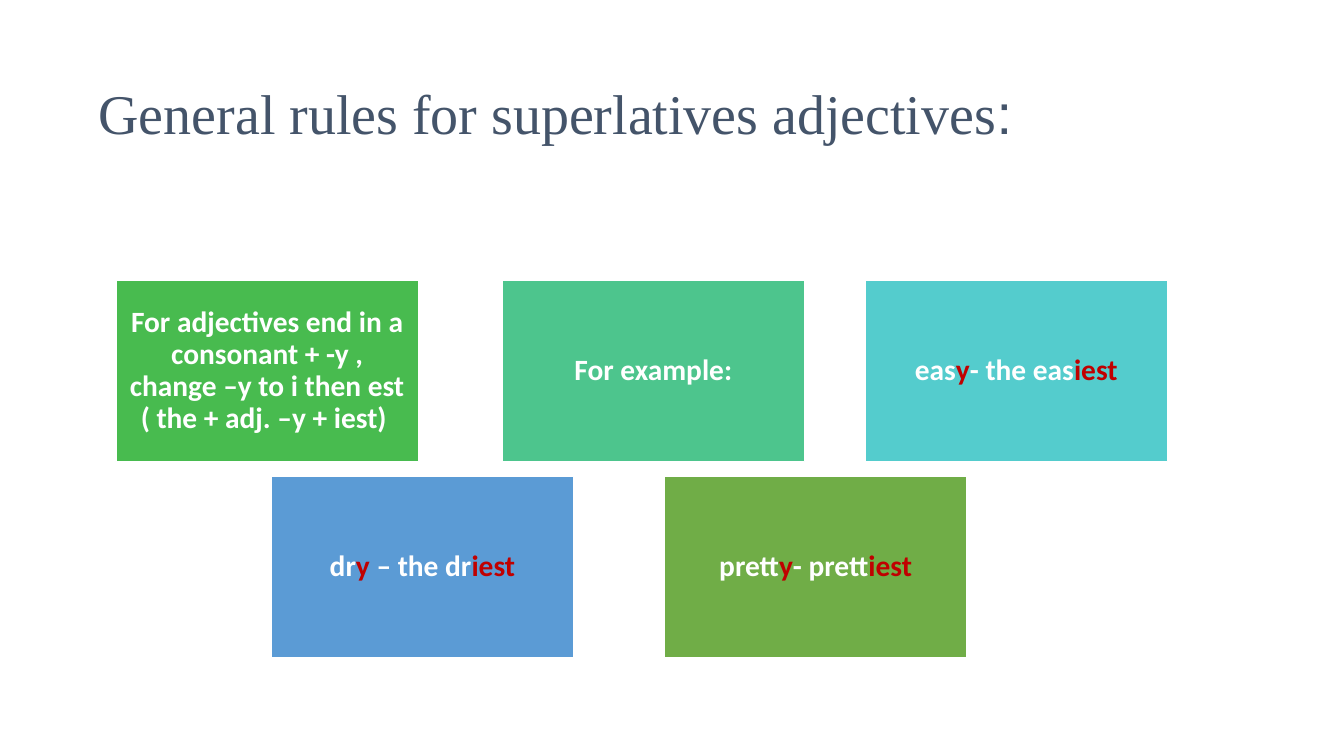
from pptx import Presentation, util as u
from pptx.dml.color import RGBColor
from pptx.enum import shapes, text

WHITE = RGBColor(0xFF, 0xFF, 0xFF)
SLATE = RGBColor(0x44, 0x54, 0x6A)
RED = RGBColor(0xC0, 0x00, 0x00)
GREEN = RGBColor(0x48, 0xBB, 0x4F)
MINT = RGBColor(0x4D, 0xC5, 0x8D)
TURQUOISE = RGBColor(0x54, 0xCC, 0xCD)
BLUE = RGBColor(0x5B, 0x9B, 0xD5)
OLIVE = RGBColor(0x70, 0xAD, 0x47)

SLIDE_WIDTH, SLIDE_HEIGHT = 13.33, 7.5
CARD_WIDTH, CARD_HEIGHT = 3, 1.8
UPPER_ROW, LOWER_ROW = 2.78, 4.73

# Left, top, fill and wording of each card; every second piece is an ending in red
CARDS = [
    (1.15, UPPER_ROW, GREEN,
     ["For adjectives end in a consonant + -y , change –y to i then est "
      "( the + adj. –y + iest) "]),
    (4.98, UPPER_ROW, MINT, ["For example:"]),
    (8.58, UPPER_ROW, TURQUOISE, ["eas", "y", "- the eas", "iest"]),
    (2.69, LOWER_ROW, BLUE, ["dr", "y", " – the dr", "iest"]),
    (6.59, LOWER_ROW, OLIVE, ["prett", "y", "- prett", "iest"]),
]


def add_piece(paragraph, wording, font, size, color, bold=False):
    run = paragraph.add_run()
    run.text = wording
    run.font.name = font
    run.font.size = u.Pt(size)
    run.font.color.rgb = color
    run.font.bold = bold


def add_title(slide, left, top, width, height):
    title = slide.shapes.add_textbox(*map(u.Inches, (left, top, width, height)))
    frame = title.text_frame
    frame.word_wrap = True
    frame.vertical_anchor = text.MSO_ANCHOR.MIDDLE
    heading = frame.paragraphs[0]
    heading.line_spacing = 0.9
    add_piece(heading, "General rules for superlatives adjectives",
              "Times New Roman", 40, SLATE)
    add_piece(heading, ":", "Arial", 40, SLATE)


def add_card(slide, left, top, width, height, fill, pieces):
    card = slide.shapes.add_shape(shapes.MSO_SHAPE.RECTANGLE,
                                  *map(u.Inches, (left, top, width, height)))
    card.shadow.inherit = False
    card.fill.solid()
    card.fill.fore_color.rgb = fill
    card.line.color.rgb = WHITE
    card.line.width = u.Pt(1)
    frame = card.text_frame
    frame.word_wrap = True
    frame.vertical_anchor = text.MSO_ANCHOR.MIDDLE
    frame.margin_left = frame.margin_right = u.Inches(0.09)
    frame.margin_top = frame.margin_bottom = u.Inches(0.09)
    rule = frame.paragraphs[0]
    rule.alignment = text.PP_ALIGN.CENTER
    rule.line_spacing = 0.9
    for index, wording in enumerate(pieces):
        add_piece(rule, wording, "Calibri", 21, RED if index % 2 else WHITE, bold=True)


def main():
    deck = Presentation()
    deck.slide_width = u.Inches(SLIDE_WIDTH)
    deck.slide_height = u.Inches(SLIDE_HEIGHT)
    slide = deck.slides.add_slide(deck.slide_layouts[6])

    # Heading
    add_title(slide, 0.88, 0.5, 11.57, 1.3)

    # Rule and examples
    for left, top, fill, pieces in CARDS:
        add_card(slide, left, top, CARD_WIDTH, CARD_HEIGHT, fill, pieces)

    deck.save("out.pptx")


if __name__ == "__main__":
    main()
